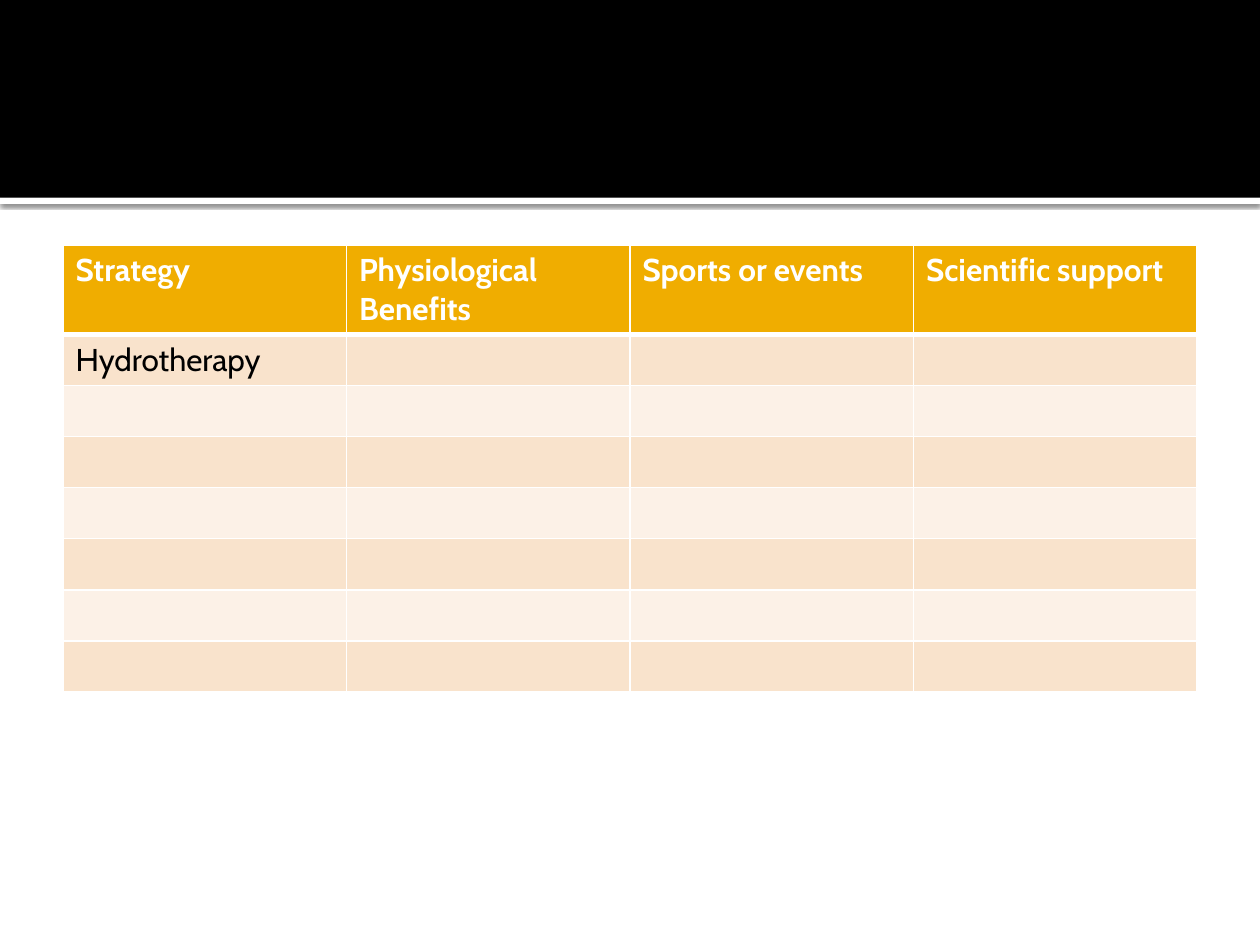
from lxml import etree
from pptx import Presentation
from pptx import util as u
from pptx.dml.color import RGBColor
from pptx.enum import shapes
from pptx.oxml import parse_xml
from pptx.oxml.ns import nsdecls, qn

Pt = u.Pt


def paint(fill, color):
    fill.solid()
    fill.fore_color.rgb = RGBColor.from_string(color)


def set_borders(cell, widths):
    """Draw white cell borders; widths maps L, R, T, B to points."""
    tcPr = cell._tc.get_or_add_tcPr()
    for i, (side, width) in enumerate(widths.items()):
        tcPr.insert(i, parse_xml(
            f'<a:ln{side} {nsdecls("a")} w="{Pt(width)}"><a:solidFill>'
            f'<a:srgbClr val="FFFFFF"/></a:solidFill></a:ln{side}>'))


prs = Presentation()
prs.slide_width, prs.slide_height = Pt(720), Pt(540)
s = prs.slides.add_slide(prs.slide_layouts[6])

# Header band with a shadowed white strip beneath it
for top, height, color in [(113, 3.6, "FFFFFF"), (0, 113, "000000")]:
    sp = s.shapes.add_shape(shapes.MSO_SHAPE.RECTANGLE, 0, Pt(top), Pt(720), Pt(height))
    sp.shadow.inherit = False
    paint(sp.fill, color)
    sp.line.fill.background()
    if color == "FFFFFF":
        effects = sp._element.spPr.find(qn("a:effectLst"))
        shadow = etree.SubElement(effects, qn("a:outerShdw"), blurRad=str(Pt(2.5)),
                                  dist=str(Pt(0.8)), dir="5400000", rotWithShape="0")
        black = etree.SubElement(shadow, qn("a:srgbClr"), val="000000")
        etree.SubElement(black, qn("a:alpha"), val="60000")

# Recovery strategy table
rows = [["Strategy", "Physiological Benefits", "Sports or events", "Scientific support"],
        ["Hydrotherapy", "", "", ""]] + [[""] * 4 for _ in range(6)]
table = s.shapes.add_table(len(rows), 4, Pt(36), Pt(139.9), Pt(648), Pt(255.3)).table
for col in table.columns:
    col.width = Pt(162)
for i, values in enumerate(rows):
    header = i == 0
    table.rows[i].height = Pt(50.9 if header else 29.2)
    for j, value in enumerate(values):
        cell = table.cell(i, j)
        paint(cell.fill, "F0AD00" if header else "F9E3CC" if i % 2 else "FCF1E7")
        set_borders(cell, {"L": 1, "R": 1, "T": 3 if i == 1 else 1, "B": 3 if header else 1})
        p = cell.text_frame.paragraphs[0]
        p.font.size = Pt(18)
        if value:
            r = p.add_run()
            r.text = value
            r.font.name, r.font.size, r.font.bold = "Cabin", Pt(18), header
            paint(r.font.fill, "FFFFFF" if header else "000000")

prs.save("out.pptx")
